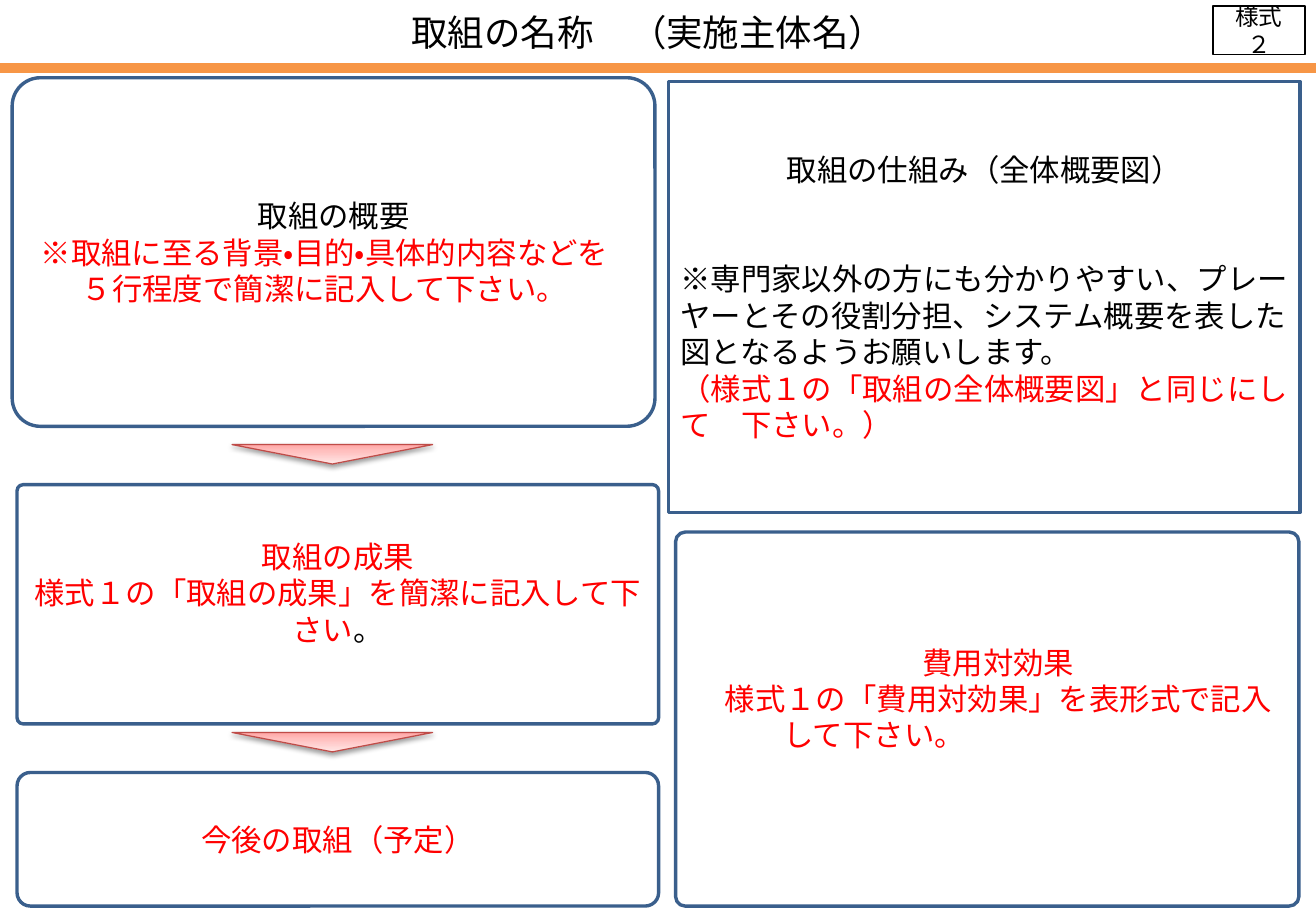
from lxml import etree
from pptx import Presentation, util as u
from pptx.dml.color import RGBColor
from pptx.enum import shapes as s, text as t
from pptx.enum.lang import MSO_LANGUAGE_ID
from pptx.oxml import parse_xml
from pptx.oxml.ns import nsdecls, qn

FONT = "Calibri"
BLACK = RGBColor(0x00, 0x00, 0x00)
RED = RGBColor(0xFF, 0x00, 0x00)
NAVY = RGBColor(0x3A, 0x5F, 0x8C)
ORANGE = RGBColor(0xF7, 0x96, 0x46)
BRICK = RGBColor(0xBF, 0x4C, 0x48)
PINKS = [(0, RGBColor(0xFF, 0xA6, 0xA5)), (35, RGBColor(0xFF, 0xC0, 0xBF)),
         (100, RGBColor(0xFF, 0xE7, 0xE7))]
CENTER, LEFT = t.PP_ALIGN.CENTER, t.PP_ALIGN.LEFT


def inches(box):
    return [u.Inches(value) for value in box]


def add_para(frame, runs, size=18, align=CENTER, before=0, left=0, right=0):
    """Write one paragraph from (text, colour) runs; a "\\v" breaks the line."""
    para = frame.paragraphs[0]
    if para.runs:
        para = frame.add_paragraph()
    para.alignment = align
    para.space_before = u.Pt(before)
    props = para._p.get_or_add_pPr()
    for side, indent in (("marL", left), ("marR", right)):
        if indent:
            props.set(side, str(u.Inches(indent)))
    for wording, color in runs:
        for index, line in enumerate(wording.split("\v")):
            if index:
                para.add_line_break()
            span = para.add_run()
            span.text = line
            span.font.name, span.font.size = FONT, u.Pt(size)
            span.font.color.rgb = color
            span.font.language_id = MSO_LANGUAGE_ID.JAPANESE


def add_panel(page, box, radius=0, line=NAVY, width=2):
    """Draw an outlined panel and return its text frame."""
    kind = s.MSO_SHAPE.ROUNDED_RECTANGLE if radius else s.MSO_SHAPE.RECTANGLE
    panel = page.shapes.add_shape(kind, *inches(box))
    if radius:
        panel.adjustments[0] = radius
    panel.shadow.inherit = False
    panel.fill.background()
    panel.line.color.rgb, panel.line.width = line, u.Pt(width)
    frame = panel.text_frame
    frame.word_wrap = True
    frame.vertical_anchor = t.MSO_ANCHOR.MIDDLE
    return frame


def add_caption(page, box):
    frame = page.shapes.add_textbox(*inches(box)).text_frame
    frame.word_wrap = True
    return frame


def add_header(page, box):
    left, top, width, height = box
    # Orange rule under the heading
    rule = page.shapes.add_shape(s.MSO_SHAPE.RECTANGLE,
                                 *inches((left, top + height - 0.08, width, 0.08)))
    rule.shadow.inherit = False
    rule.fill.solid()
    rule.fill.fore_color.rgb = ORANGE
    rule.line.fill.background()
    # Title
    title = page.shapes.title
    title.left, title.top, title.width, title.height = inches(
        (left + 1.4, top + 0.05, 7.87, 0.42))
    frame = title.text_frame
    frame.auto_size = t.MSO_AUTO_SIZE.NONE
    frame.vertical_anchor = t.MSO_ANCHOR.MIDDLE
    add_para(frame, [("取組の名称　（実施主体名）", BLACK)], 21.6)
    # Form number
    form = add_panel(page, (left + width - 0.85, top + 0.05, 0.76, 0.4),
                     line=BLACK, width=1)
    add_para(form, [("様式２", BLACK)], 14)


def add_arrow(page, box):
    """Draw a downward triangle with a pink gradient and a soft shadow."""
    arrow = page.shapes.add_shape(s.MSO_SHAPE.ISOSCELES_TRIANGLE, *inches(box))
    arrow.rotation = 180
    arrow.line.color.rgb, arrow.line.width = BRICK, u.Pt(0.75)
    arrow.shadow.inherit = False
    stops = "".join(f'<a:gs pos="{pos * 1000}"><a:srgbClr val="{color}"/></a:gs>'
                    for pos, color in PINKS)
    props = arrow._element.spPr
    props.find(qn("a:prstGeom")).addnext(parse_xml(
        f'<a:gradFill {nsdecls("a")} rotWithShape="1"><a:gsLst>{stops}</a:gsLst>'
        '<a:lin ang="16200000" scaled="1"/></a:gradFill>'))
    shadow = etree.SubElement(
        props.find(qn("a:effectLst")), qn("a:outerShdw"), dir="5400000",
        blurRad=str(u.Pt(3.1)), dist=str(u.Pt(1.6)), rotWithShape="0")
    color = etree.SubElement(shadow, qn("a:srgbClr"), val=str(BLACK))
    etree.SubElement(color, qn("a:alpha"), val="38000")


def add_flow(page, box):
    """Left column: overview, results and plans joined by arrows."""
    left, top, width, height = box
    overview = add_panel(page, (left, top, width - 0.03, 2.87), 0.081)
    add_para(overview, [("取組の概要", BLACK)])
    add_para(overview, [("※取組に至る背景・目的・具体的内容などを\v"
                         "５行程度で簡潔に記入して下さい。", RED)], right=0.15)

    inner, inner_width = left + 0.04, width - 0.04
    add_panel(page, (inner, top + 3.35, inner_width, 1.97), 0.026)
    results = add_caption(page, (inner, top + 3.74, inner_width, 0.71))
    add_para(results, [("取組の成果", RED)])
    add_para(results, [("様式１の「取組の成果」を簡潔に記入して下さい", RED),
                       ("。", BLACK)])

    plans = add_panel(page, (inner, top + height - 1.1, inner_width, 1.1), 0.1)
    add_para(plans, [("今後の取組（予定）", RED)])

    for drop in (3.02, 5.39):
        add_arrow(page, (left + 1.81, top + drop, 1.65, 0.16))


def add_scheme(page, box):
    """Upper right: how the project works."""
    frame = add_panel(page, box)
    add_para(frame, [("取組の仕組み（全体概要図）", BLACK)])
    add_para(frame, [("※専門家以外の方にも分かりやすい、プレーヤーとその役割分担、"
                      "システム概要を表した図となるようお願いします。", BLACK)],
             align=LEFT, before=43)
    add_para(frame, [("（様式１の「取組の全体概要図」と同じにして　下さい。）", RED)],
             align=LEFT)


def add_cost(page, box):
    """Lower right: cost effectiveness."""
    left, top, width, height = box
    add_panel(page, box, 0.026)
    frame = add_caption(page, (left + 0.04, top + 0.87, width + 0.1, 1.01))
    add_para(frame, [("費用対効果", RED)])
    add_para(frame, [("様式１の「費用対効果」を表形式で記入", RED)])
    add_para(frame, [("して下さい。", RED)], align=LEFT, left=0.75)


def main():
    deck = Presentation()
    deck.slide_width, deck.slide_height = u.Inches(10.83), u.Inches(7.5)
    page = deck.slides.add_slide(deck.slide_layouts[5])
    add_header(page, (0, 0, 10.83, 0.6))
    add_flow(page, (0.1, 0.64, 5.32, 6.82))
    add_scheme(page, (5.5, 0.67, 5.2, 3.55))
    add_cost(page, (5.56, 4.38, 5.13, 3.08))
    deck.save("out.pptx")


if __name__ == "__main__":
    main()
